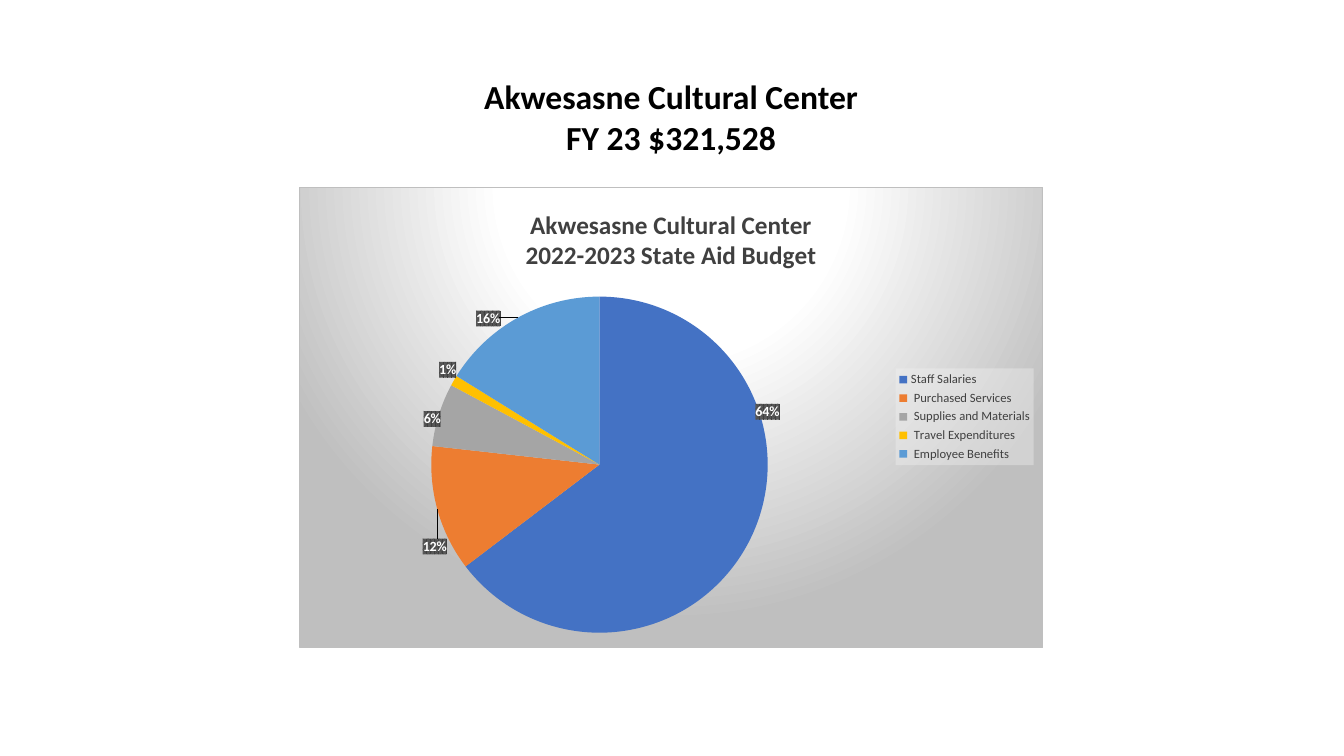
import dataclasses

import pptx
import pptx.chart.data
import pptx.dml.color
import pptx.enum.chart
import pptx.enum.text
import pptx.oxml
import pptx.oxml.ns
import pptx.util

Cm, Pt = pptx.util.Cm, pptx.util.Pt
RGB = pptx.dml.color.RGBColor.from_string
qn = pptx.oxml.ns.qn
NS = pptx.oxml.ns.nsdecls("c", "a")


@dataclasses.dataclass
class Theme:
    font: str = "Calibri"
    heading: str = "000000"
    text: str = "404040"
    label: str = "FFFFFF"
    label_fill: str = "404040"
    label_dots: str = "595959"
    legend_fill: str = "F2F2F2"
    light: str = "FFFFFF"
    dark: str = "BFBFBF"
    heading_size: int = 24
    title_size: int = 18
    label_size: int = 10
    legend_size: int = 9


theme = Theme()

# Category, percent, slice colour, label shift as a fraction of the chart
budget = [
    ("Staff Salaries", 64, "4472C4", (0, -0.3)),
    (" Purchased Services", 12, "ED7D31", (0.02, 0.06)),
    (" Supplies and Materials", 6, "A5A5A5", (0.01, 0.03)),
    (" Travel Expenditures", 1, "FFC000", (0.01, 0)),
    (" Employee Benefits", 16, "5B9BD5", (-0.02, 0.03)),
]


def style(font, size, color, bold=False):
    font.name = theme.font
    font.size = Pt(size)
    font.bold = bold
    font.color.rgb = RGB(color)


def place(part, after, **settings):
    """Give a chart part a manual layout, put behind its child named after."""
    for old in part.findall(qn("c:layout")):
        part.remove(old)
    items = "".join(f'<c:{k} val="{v}"/>' for k, v in settings.items())
    layout = pptx.oxml.parse_xml(
        f"<c:layout {NS}><c:manualLayout>{items}</c:manualLayout></c:layout>")
    if after:
        part.find(qn(after)).addnext(layout)
    else:
        part.insert(0, layout)


prs = pptx.Presentation()
prs.slide_width, prs.slide_height = Cm(33.87), Cm(19.05)
s = prs.slides.add_slide(prs.slide_layouts[6])
left, width = Cm(7.54), Cm(18.75)

# Pie chart
data = pptx.chart.data.CategoryChartData()
data.categories = [name for name, *_ in budget]
data.add_series("Series 1", [percent for _, percent, *_ in budget])
chart = s.shapes.add_chart(
    pptx.enum.chart.XL_CHART_TYPE.PIE, left, Cm(4.7), width, Cm(11.63), data).chart
style(chart.font, theme.label_size, theme.heading)

chart.has_title = True
tf = chart.chart_title.text_frame
tf.text = "Akwesasne Cultural Center\n2022-2023 State Aid Budget"
for p in tf.paragraphs:
    for r in p.runs:
        style(r.font, theme.title_size, theme.text, bold=True)
place(tf._txBody.getparent().getparent(), "c:tx",
      xMode="edge", yMode="edge", x=0.3, y=0.04)

plot = chart.plots[0]
plot.vary_by_categories = True
place(chart._chartSpace.chart.plotArea, None, layoutTarget="inner",
      xMode="edge", yMode="edge", x=0.177, y=0.238, w=0.453, h=0.73)

ser = plot.series[0]
for i, (_, _, color, _) in enumerate(budget):
    fill = ser.points[i].format.fill
    fill.solid()
    fill.fore_color.rgb = RGB(color)

# Percent labels on dark dotted boxes
label_look = f"""
<c:numFmt formatCode="0&quot;%&quot;" sourceLinked="0"/>
<c:spPr><a:pattFill prst="pct75">
<a:fgClr><a:srgbClr val="{theme.label_fill}"/></a:fgClr>
<a:bgClr><a:srgbClr val="{theme.label_dots}"/></a:bgClr>
</a:pattFill><a:ln><a:noFill/></a:ln></c:spPr>
<c:txPr><a:bodyPr/><a:p><a:pPr><a:defRPr sz="{theme.label_size * 100}" b="1">
<a:solidFill><a:srgbClr val="{theme.label}"/></a:solidFill>
<a:latin typeface="{theme.font}"/></a:defRPr></a:pPr></a:p></c:txPr>
<c:dLblPos val="outEnd"/><c:showLegendKey val="0"/><c:showVal val="1"/>
<c:showCatName val="0"/><c:showSerName val="0"/><c:showPercent val="0"/>
<c:showBubbleSize val="0"/>"""
point_labels = "".join(
    f'<c:dLbl><c:idx val="{i}"/>{label_look}</c:dLbl>' for i in range(len(budget)))
labels = pptx.oxml.parse_xml(
    f'<c:dLbls {NS}>{point_labels}{label_look}<c:showLeaderLines val="1"/></c:dLbls>')
for label, (_, _, _, (dx, dy)) in zip(labels.findall(qn("c:dLbl")), budget):
    place(label, "c:idx", x=dx, y=dy)
ser._element.find(qn("c:cat")).addprevious(labels)

# Legend on a pale see-through panel
chart.has_legend = True
legend = chart.legend
legend.position = pptx.enum.chart.XL_LEGEND_POSITION.RIGHT
legend.include_in_layout = False
style(legend.font, theme.legend_size, theme.text)
place(legend._element, "c:legendPos",
      xMode="edge", yMode="edge", x=0.802, y=0.394, w=0.186, h=0.21)
legend._element.find(qn("c:overlay")).addnext(pptx.oxml.parse_xml(
    f'<c:spPr {NS}><a:solidFill><a:srgbClr val="{theme.legend_fill}">'
    '<a:alpha val="39000"/></a:srgbClr></a:solidFill></c:spPr>'))

# Round gradient behind the chart
stops = "".join(
    f'<a:gs pos="{pos * 1000}"><a:srgbClr val="{color}"/></a:gs>'
    for pos, color in [(0, theme.light), (39, theme.light), (100, theme.dark)])
chart._chartSpace.chart.addnext(pptx.oxml.parse_xml(
    f'<c:spPr {NS}><a:gradFill><a:gsLst>{stops}</a:gsLst><a:path path="circle">'
    '<a:fillToRect l="50000" t="-80000" r="50000" b="180000"/></a:path></a:gradFill>'
    f'<a:ln w="9525"><a:solidFill><a:srgbClr val="{theme.dark}"/></a:solidFill></a:ln>'
    '</c:spPr>'))

# Heading
tf = s.shapes.add_textbox(left, Cm(1.8), width, Cm(2.31)).text_frame
tf.word_wrap = True
tf.auto_size = pptx.enum.text.MSO_AUTO_SIZE.SHAPE_TO_FIT_TEXT
tf.text = "Akwesasne Cultural Center\nFY 23 $321,528"
for p in tf.paragraphs:
    p.alignment = pptx.enum.text.PP_ALIGN.CENTER
    for r in p.runs:
        style(r.font, theme.heading_size, theme.heading, bold=True)

prs.save("out.pptx")
